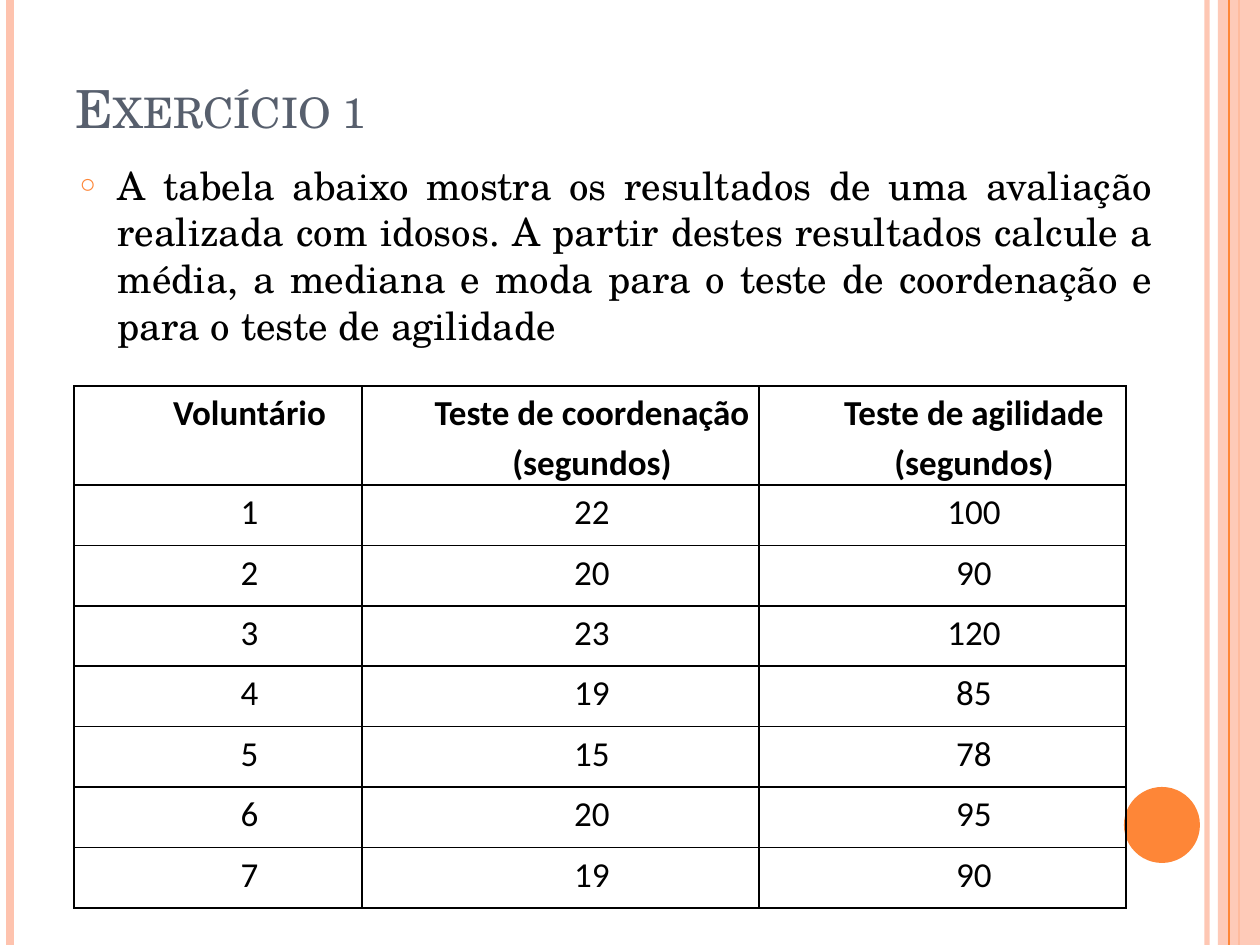
from dataclasses import dataclass
from typing import Any

import pptx
import pptx.dml.color
import pptx.enum.shapes
import pptx.enum.text
import pptx.oxml
import pptx.oxml.ns
import pptx.util

SCALE = 914400 / 126
HUES = {"peach": "FEC3AE", "orange": "FE8637", "slate": "575F6D", "black": "000000"}
NS = 'xmlns:a="http://schemas.openxmlformats.org/drawingml/2006/main"'
ALIGN = pptx.enum.text.PP_ALIGN
ANCHOR = pptx.enum.text.MSO_ANCHOR


@dataclass
class Stripe:
    left: int
    hue: str
    width: float
    alpha: int = 100


@dataclass
class Block:
    kind: Any
    box: tuple[int, int, int, int]
    hue: str
    alpha: int = 100


STRIPES = [
    Stripe(1207, "peach", 3, 93),
    Stripe(10, "peach", 4.5),
    Stripe(1239, "orange", 1.5),
    Stripe(1229, "orange", 0.75),
]
KINDS = pptx.enum.shapes.MSO_SHAPE
BLOCKS = [
    Block(KINDS.RECTANGLE, (1218, 0, 42, 945), "peach", 87),
    Block(KINDS.OVAL, (1124, 787, 76, 76), "orange"),
]
HEADS = ["Voluntário", "Teste de coordenação (segundos)", "Teste de agilidade\n(segundos)"]
SCORES = [(22, 100), (20, 90), (23, 120), (19, 85), (15, 78), (20, 95), (19, 90)]


def px(size: int) -> int:
    return round(size * SCALE)


def tint(name: str) -> pptx.dml.color.RGBColor:
    return pptx.dml.color.RGBColor.from_string(HUES[name])


def apply(item: Any, form: dict[str, Any]) -> None:
    for name, value in form.items():
        setattr(item, name, value)


def add_xml(root: Any, text: str, spot: int | None = None) -> None:
    node = pptx.oxml.parse_xml(text.replace(">", f" {NS}>", 1) if "/>" not in text.split(">")[0] + ">"
                               else text.replace("/>", f" {NS}/>", 1))
    root.insert(len(root) if spot is None else spot, node)


def fade(root: Any, alpha: int) -> None:
    if alpha < 100:
        hue = next(root.iter(pptx.oxml.ns.qn("a:srgbClr")))
        add_xml(hue, f'<a:alpha val="{alpha * 1000}"/>')


def draw_stripe(slide: Any, stripe: Stripe) -> None:
    left = px(stripe.left)
    line = slide.shapes.add_connector(pptx.enum.shapes.MSO_CONNECTOR.STRAIGHT, left, 0, left, px(945))
    line.line.width = pptx.util.Pt(stripe.width)
    line.line.color.rgb = tint(stripe.hue)
    props = line.element.spPr
    fade(props, stripe.alpha)
    add_xml(props, "<a:effectLst/>")


def draw_block(slide: Any, block: Block) -> None:
    shape = slide.shapes.add_shape(block.kind, *map(px, block.box))
    shape.shadow.inherit = False
    shape.fill.solid()
    shape.fill.fore_color.rgb = tint(block.hue)
    shape.line.fill.background()
    fade(shape.element.spPr, block.alpha)


def fill_holder(shape: Any, box: tuple[int, int, int, int], text: str, anchor: Any,
                form: dict[str, Any], font: dict[str, Any], hue: str) -> Any:
    apply(shape, dict(zip(("left", "top", "width", "height"), map(px, box))))
    frame = shape.text_frame
    frame.text = text
    apply(frame, {"word_wrap": True, "auto_size": pptx.enum.text.MSO_AUTO_SIZE.NONE,
                  "vertical_anchor": anchor})
    para = frame.paragraphs[0]
    apply(para, form)
    run = para.runs[0]
    apply(run.font, font)
    run.font.color.rgb = tint(hue)
    return para


def draw_title(slide: Any) -> None:
    para = fill_holder(slide.shapes.title, (63, 38, 1029, 107), "Exercício 1", ANCHOR.BOTTOM,
                       {"alignment": ALIGN.LEFT},
                       {"name": "TeX Gyre Schola", "size": pptx.util.Pt(30)}, "slate")
    para.runs[0].font._element.set("cap", "small")


def draw_body(slide: Any) -> None:
    text = ("A tabela abaixo mostra os resultados de uma avaliação realizada com idosos. "
            "A partir destes resultados calcule a média, a mediana e moda para o teste de "
            "coordenação e para o teste de agilidade")
    para = fill_holder(slide.placeholders[1], (67, 155, 1099, 193), text, ANCHOR.TOP,
                       {"alignment": ALIGN.JUSTIFY, "space_before": pptx.util.Pt(6)},
                       {"name": "TeX Gyre Schola", "size": pptx.util.Pt(22.2)}, "black")
    props = para._p.get_or_add_pPr()
    props.set("marL", str(px(38)))
    props.set("indent", str(-px(38)))
    add_xml(props, f'<a:buClr><a:srgbClr val="{HUES["orange"]}"/></a:buClr>')
    add_xml(props, '<a:buSzPct val="70000"/>')
    add_xml(props, '<a:buChar char="○"/>')


def fill_cell(cell: Any, text: str, bold: bool) -> None:
    apply(cell, {"text": text, "margin_left": px(9), "margin_right": px(9), "margin_top": 0,
                 "margin_bottom": 0, "vertical_anchor": ANCHOR.TOP})
    cell.fill.background()
    for para in cell.text_frame.paragraphs:
        apply(para, {"alignment": ALIGN.CENTER, "line_spacing": 1.15})
        para._p.get_or_add_pPr().set("marL", str(px(63)))
        font = para.runs[0].font
        apply(font, {"name": "Calibri", "size": pptx.util.Pt(20), "bold": bold})
        font.color.rgb = tint("black")
    for spot, side in enumerate("LRTB"):
        add_xml(cell._tc.get_or_add_tcPr(),
                f'<a:ln{side} w="12700"><a:solidFill><a:srgbClr val="{HUES["black"]}"/>'
                f'</a:solidFill></a:ln{side}>', spot)


def draw_table(slide: Any) -> None:
    rows = [HEADS] + [[str(part) for part in (num, *pair)] for num, pair in enumerate(SCORES, 1)]
    frame = slide.shapes.add_table(len(rows), len(HEADS), *map(px, (74, 386, 1052, 522)))
    table = frame.table
    apply(table, {"first_row": False, "horz_banding": False})
    for col, width in zip(table.columns, (288, 397, 367)):
        col.width = px(width)
    for num, (row, texts) in enumerate(zip(table.rows, rows)):
        row.height = px(423) // len(SCORES) if num else px(99)
        for cell, text in zip(row.cells, texts):
            fill_cell(cell, text, num == 0)


def main() -> None:
    deck = pptx.Presentation()
    apply(deck, {"slide_width": px(1260), "slide_height": px(945)})
    slide = deck.slides.add_slide(deck.slide_layouts[1])
    for stripe in STRIPES[:-1]:
        draw_stripe(slide, stripe)
    draw_block(slide, BLOCKS[0])
    draw_stripe(slide, STRIPES[-1])
    draw_block(slide, BLOCKS[1])
    draw_title(slide)
    draw_body(slide)
    draw_table(slide)
    deck.save("out.pptx")


if __name__ == "__main__":
    main()
